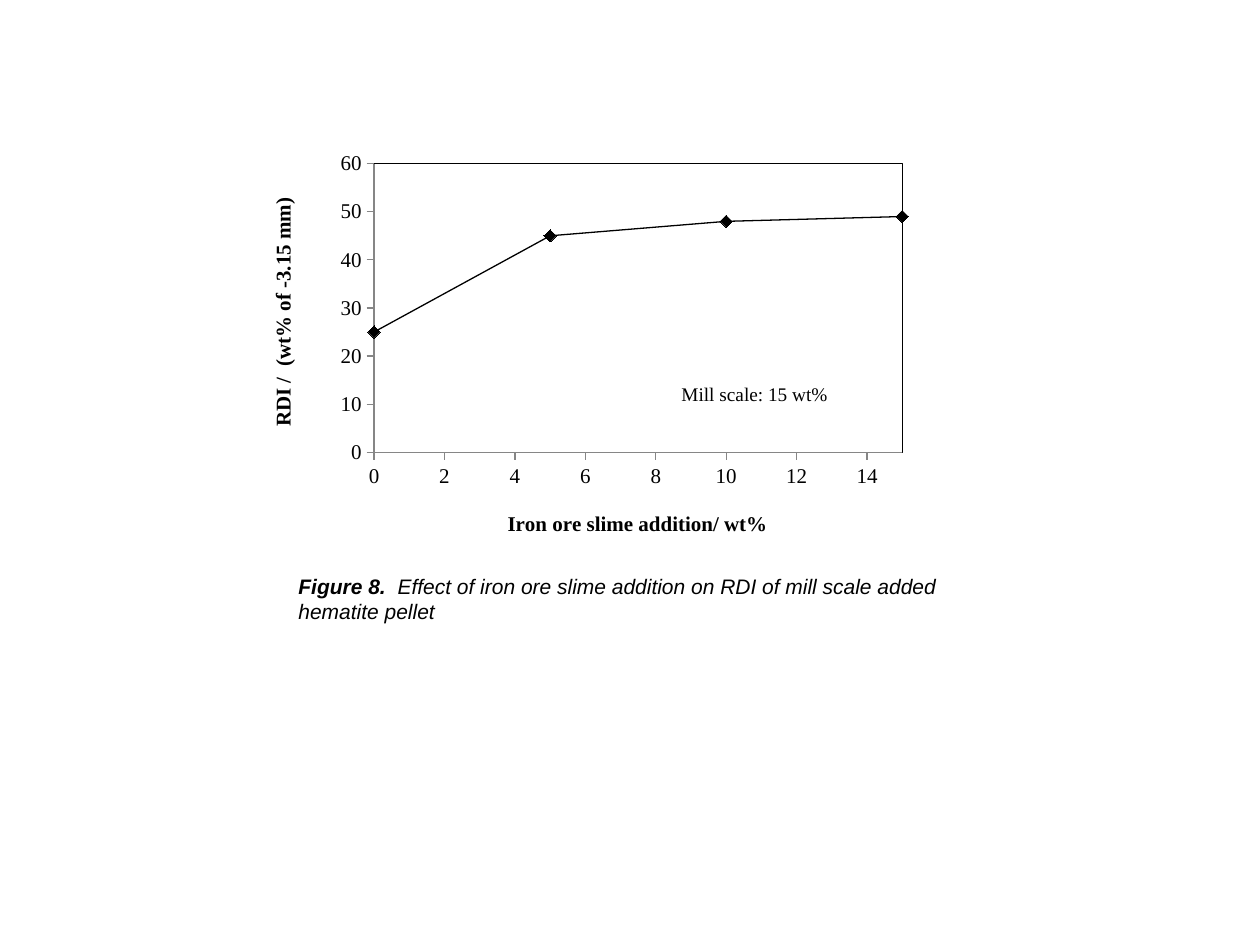
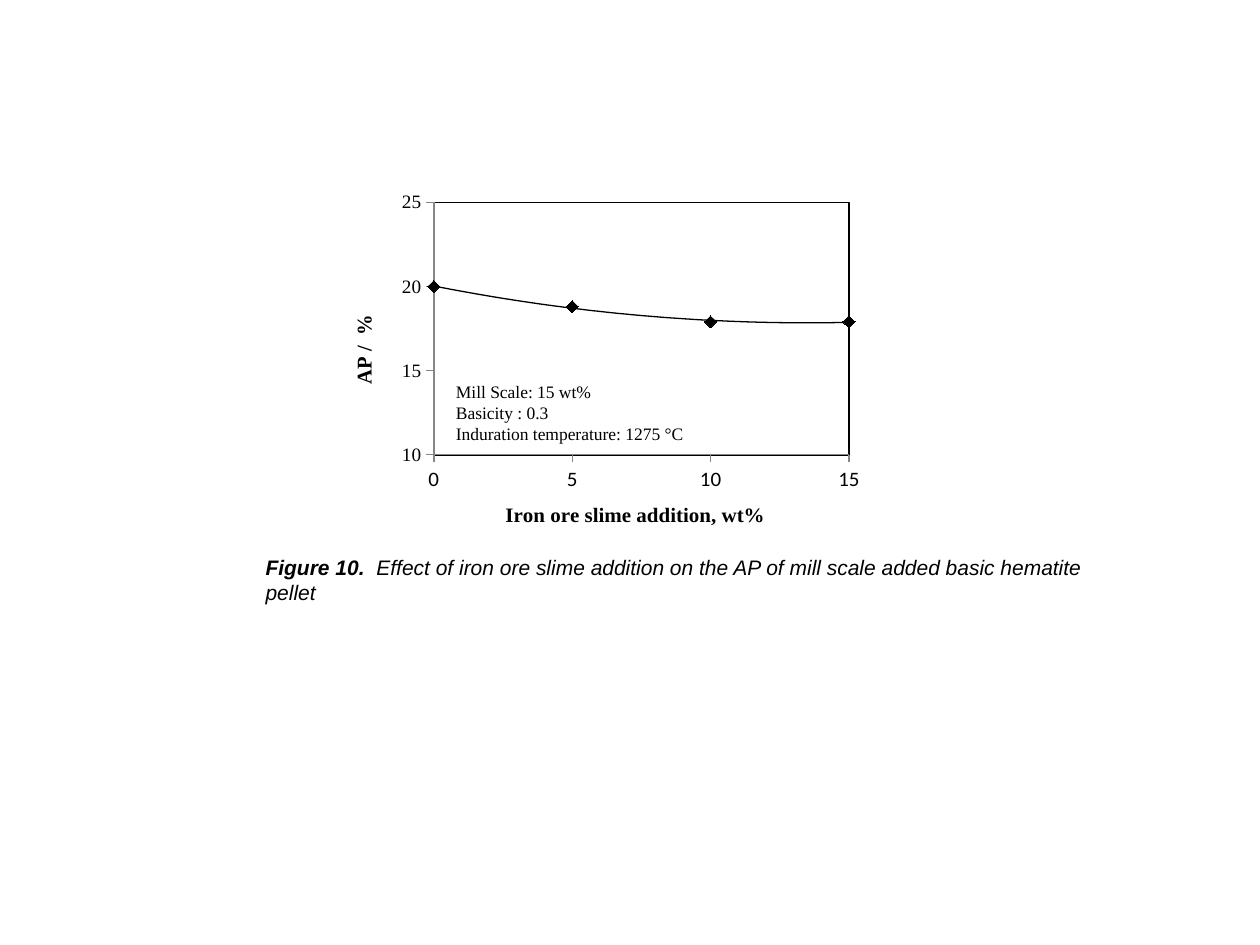
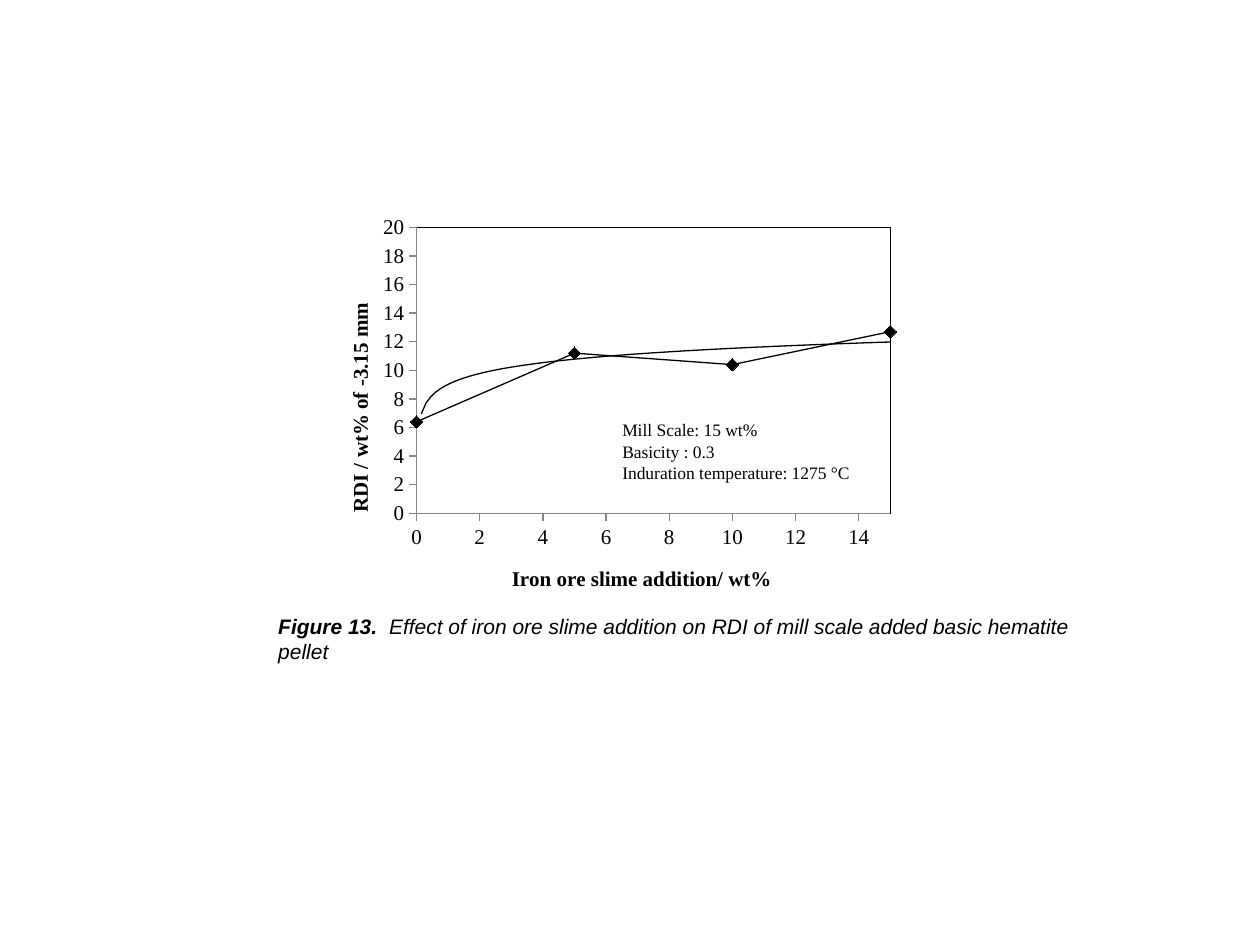
from lxml import etree
from pptx import Presentation
from pptx.chart.data import XyChartData
from pptx.dml.color import RGBColor
from pptx.enum.chart import XL_CHART_TYPE, XL_MARKER_STYLE, XL_TICK_LABEL_POSITION, XL_TICK_MARK
from pptx.enum.shapes import MSO_SHAPE
from pptx.enum.text import MSO_ANCHOR, PP_ALIGN
from pptx.oxml import parse_xml
from pptx.oxml.ns import nsdecls, qn
from pptx.util import Inches, Pt

SCATTER = XL_CHART_TYPE.XY_SCATTER_SMOOTH
DIAMOND = XL_MARKER_STYLE.DIAMOND
TICK_OUT, TICK_NONE = XL_TICK_MARK.OUTSIDE, XL_TICK_MARK.NONE
LABELS_LOW = XL_TICK_LABEL_POSITION.LOW
RECT = MSO_SHAPE.RECTANGLE
TOP, MIDDLE, LEFT = MSO_ANCHOR.TOP, MSO_ANCHOR.MIDDLE, PP_ALIGN.LEFT

BLACK = RGBColor(0, 0, 0)
WHITE = RGBColor(255, 255, 255)
AXIS_GREY = RGBColor(0x86, 0x86, 0x86)
SERIF, SANS, CHART_FONT = "Times New Roman", "Arial", "Calibri"
LINE = Pt(0.75)

SLIME = (0, 5, 10, 15)
PELLET_NOTE = ["Mill Scale: 15 wt%", "Basicity : 0.3", "Induration temperature: 1275 °C"]

# Axis: title, title position in the chart, (min, max, step), label font, label size
FIGURES = [
    dict(
        at=(1.95, 0.94, 5.39, 3.36), plot=(0.189, 0.107, 0.778, 0.684),
        values=(25, 45, 48, 49), joined=True, trend=None,
        x=("Iron ore slime addition/ wt% ", (0.38, 0.92), (0, 15, 2), SERIF, 12),
        y=("RDI /  (wt% of -3.15 mm)", (0.03, 0.18), (0, 60, 10), SERIF, 12),
        note=["Mill scale: 15 wt%"], note_at=(5.31, 2.98, 1.5, 0.29), note_size=11, boxed=False,
        caption=("Figure 8.  ", "Effect of iron ore slime addition on RDI of mill scale "
                 "added hematite pellet"),
        caption_at=(2.27, 4.5, 5.78, 0.5)),
    dict(
        at=(2.66, 1.48, 4.72, 2.75), plot=(0.166, 0.047, 0.698, 0.744),
        values=(20, 18.8, 17.9, 17.9), joined=False, trend="poly",
        x=("Iron ore slime addition, wt%", (0.28, 0.92), (0, 15, 5), CHART_FONT, 12),
        y=("AP /  %", (0.02, 0.37), (10, 25, 5), SERIF, 11),
        note=PELLET_NOTE, note_at=(3.52, 2.97, 2.19, 0.61), note_size=10, boxed=False,
        caption=("Figure 10.  ", "Effect of iron ore slime addition on the AP of mill scale "
                 "added basic hematite pellet"),
        caption_at=(2.01, 4.35, 6.77, 0.5)),
    dict(
        at=(2.58, 1.48, 4.84, 3.31), plot=(0.15, 0.098, 0.777, 0.686),
        values=(6.4, 11.2, 10.4, 12.7), joined=True, trend="log",
        x=("Iron ore slime addition/ wt%", (0.3, 0.9), (0, 15, 2), SERIF, 12),
        y=("RDI / wt% of -3.15 mm", (0.03, 0.27), (0, 20, 2), SERIF, 12),
        note=PELLET_NOTE, note_at=(4.84, 3.28, 2.15, 0.69), note_size=10, boxed=True,
        caption=("Figure 13.  ", "Effect of iron ore slime addition on RDI of mill scale "
                 "added basic hematite pellet"),
        caption_at=(2.11, 4.82, 6.59, 0.5)),
]


def box(at):
    return [Inches(v) for v in at]


def add_run(p, text, font=SERIF, size=12, bold=False, italic=False, color=BLACK):
    r = p.add_run()
    r.text = text
    f = r.font
    f.name, f.size, f.bold, f.italic = font, Pt(size), bold, italic
    f.color.rgb = color


def set_layout(parent, index, inner=False, **fractions):
    """Place a chart part by fractions of the chart's width and height."""
    layout = parent.find(qn("c:layout"))
    if layout is None:
        layout = etree.Element(qn("c:layout"))
        parent.insert(index, layout)
    manual = etree.SubElement(layout, qn("c:manualLayout"))
    if inner:
        etree.SubElement(manual, qn("c:layoutTarget")).set("val", "inner")
    for key in "xy":
        etree.SubElement(manual, qn(f"c:{key}Mode")).set("val", "edge")
    for key, value in fractions.items():
        etree.SubElement(manual, qn(f"c:{key}")).set("val", str(value))


def line_xml(tag):
    return (f'<c:{tag} {nsdecls("c", "a")}><a:ln w="{LINE}"><a:solidFill>'
            f'<a:srgbClr val="{BLACK}"/></a:solidFill></a:ln></c:{tag}>')


def add_trend(series, kind):
    trend = etree.Element(qn("c:trendline"))
    trend.append(parse_xml(line_xml("spPr")))
    etree.SubElement(trend, qn("c:trendlineType")).set("val", kind)
    if kind == "poly":
        etree.SubElement(trend, qn("c:order")).set("val", "2")
    for tag in ("dispRSqr", "dispEq"):
        etree.SubElement(trend, qn(f"c:{tag}")).set("val", "0")
    series._element.find(qn("c:xVal")).addprevious(trend)


def format_axis(axis, title, title_at, scale, font, size, vertical=False):
    axis.minimum_scale, axis.maximum_scale, axis.major_unit = scale
    axis.has_major_gridlines = False
    axis.major_tick_mark, axis.minor_tick_mark = TICK_OUT, TICK_NONE
    axis.tick_label_position = LABELS_LOW
    axis.format.line.color.rgb = AXIS_GREY
    axis.format.line.width = LINE
    labels = axis.tick_labels
    labels.number_format, labels.number_format_is_linked = "General", False
    labels.font.name, labels.font.size = font, Pt(size)
    tf = axis.axis_title.text_frame
    add_run(tf.paragraphs[0], title, bold=True)
    element = axis.axis_title._element
    if vertical:
        element.find(".//" + qn("a:bodyPr")).set("rot", "-5400000")
    set_layout(element, 1, x=title_at[0], y=title_at[1])


def add_scatter(s, fig):
    data = XyChartData()
    points = data.add_series("Series 1")
    for x, y in zip(SLIME, fig["values"]):
        points.add_data_point(x, y)
    chart = s.shapes.add_chart(SCATTER, *box(fig["at"]), data).chart
    chart.has_legend = chart.has_title = False
    chart.font.name, chart.font.size = CHART_FONT, Pt(10)
    chart.font.color.rgb = BLACK
    chart.plots[0].vary_by_categories = False

    series = chart.plots[0].series[0]
    series.smooth = fig["joined"]
    if fig["joined"]:
        series.format.line.color.rgb = BLACK
        series.format.line.width = LINE
    else:
        series.format.line.fill.background()
    marker = series.marker
    marker.style, marker.size = DIAMOND, 7
    marker.format.fill.solid()
    marker.format.fill.fore_color.rgb = BLACK
    marker.format.line.color.rgb = BLACK
    if fig["trend"]:
        add_trend(series, fig["trend"])

    format_axis(chart.category_axis, *fig["x"])
    format_axis(chart.value_axis, *fig["y"], vertical=True)
    plot_area = chart._chartSpace.find(".//" + qn("c:plotArea"))
    set_layout(plot_area, 0, inner=True, **dict(zip("xywh", fig["plot"])))
    plot_area.append(parse_xml(line_xml("spPr")))


def add_text(s, at, paragraphs, boxed=False):
    """Add a text box, or a white rectangle; each paragraph is a list of (text, format)."""
    if boxed:
        sp = s.shapes.add_shape(RECT, *box(at))
        sp.shadow.inherit = False
        sp.fill.solid()
        sp.fill.fore_color.rgb = WHITE
        sp.line.color.rgb = WHITE
        sp.line.width = LINE
    else:
        sp = s.shapes.add_textbox(*box(at))
    tf = sp.text_frame
    tf.word_wrap = True
    tf.vertical_anchor = TOP if boxed else MIDDLE
    for i, runs in enumerate(paragraphs):
        p = tf.add_paragraph() if i else tf.paragraphs[0]
        p.alignment = LEFT
        for text, style in runs:
            add_run(p, text, **style)


def main():
    prs = Presentation()
    prs.slide_width, prs.slide_height = Inches(10), Inches(7.5)
    blank = prs.slide_layouts[6]
    caption_style = dict(font=SANS, italic=True)
    for fig in FIGURES:
        s = prs.slides.add_slide(blank)
        add_scatter(s, fig)
        note = [[(line, dict(size=fig["note_size"]))] for line in fig["note"]]
        add_text(s, fig["note_at"], note, boxed=fig["boxed"])
        number, wording = fig["caption"]
        add_text(s, fig["caption_at"],
                 [[(number, dict(caption_style, bold=True)), (wording, caption_style)]])
    prs.save("out.pptx")


if __name__ == "__main__":
    main()
